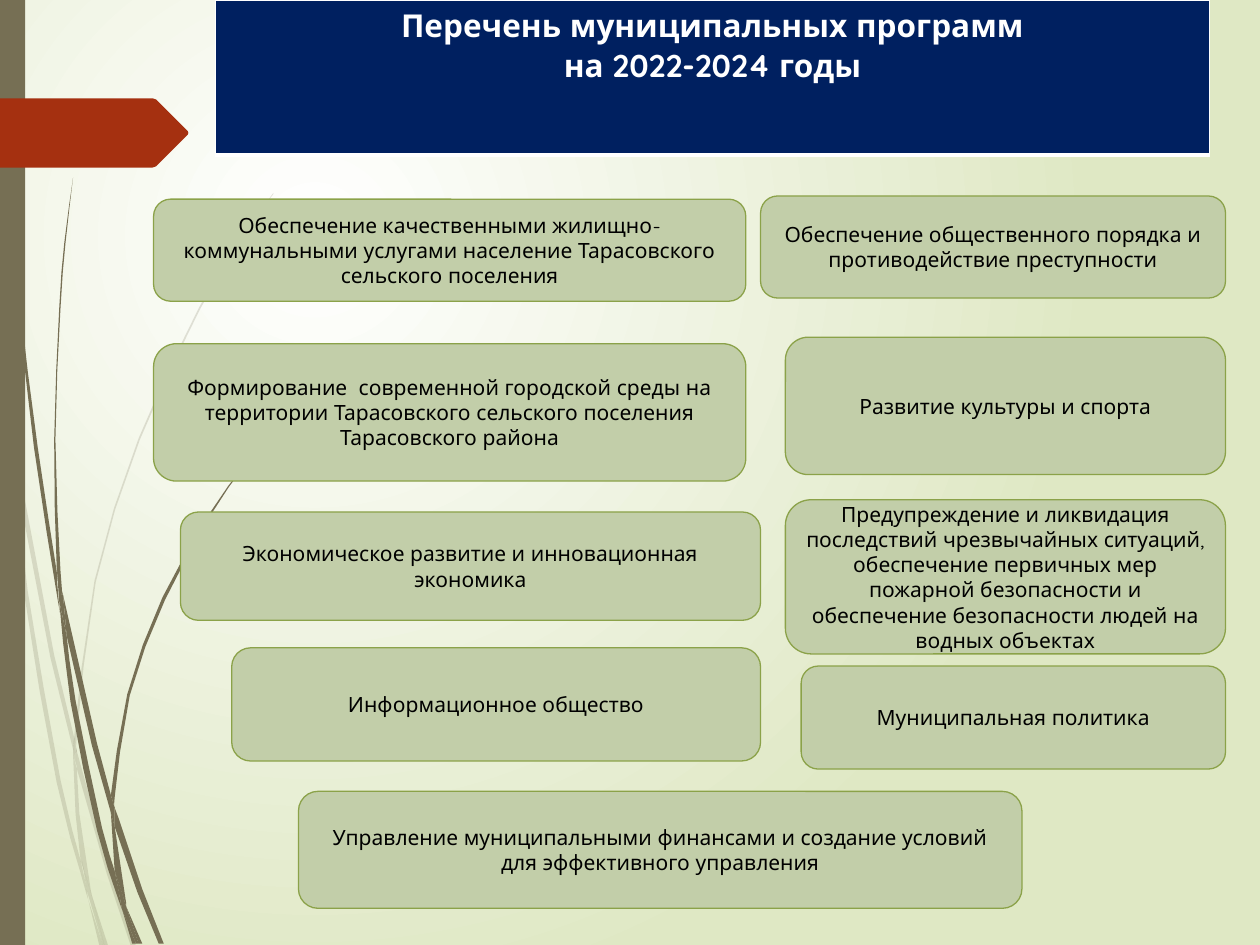
from lxml.etree import SubElement
from pptx import Presentation
from pptx.dml.color import RGBColor
from pptx.enum.shapes import MSO_SHAPE as Shape
from pptx.enum.text import MSO_ANCHOR as Anchor, PP_ALIGN as Align
from pptx.oxml import parse_xml
from pptx.oxml.ns import nsdecls, qn
from pptx.util import Pt

THEME = {
    "font": "Quicksand", "title_size": 18, "box_size": 12,
    "white": "FFFFFF", "black": "000000", "navy": "002060",
    "box": "C2CEA9", "outline": "8BA249", "earth": "766F54",
    "red": "A53010", "background": "DFE8C4",
}
SLIDE_SIZE = (720, 540)
TITLE = ["Перечень муниципальных программ", "на 2022-2024 годы"]
TITLE_PLACE = (123.1, 0, 568.1, 88.6)
TITLE_BORDERS = {"lnL": 1, "lnR": 1, "lnT": 1, "lnB": 3}
STRIPE = (0, 0, 14.4, 540)

INNER, MIDDLE, OUTER = 426.2, 434.6, 700.3
PROGRAMS = [
    (87.8, 113.8, INNER, 58.3, "Обеспечение качественными жилищно-коммунальными услугами население Тарасовского сельского поселения"),
    (434.6, 112, OUTER, 58.3, "Обеспечение общественного порядка и противодействие преступности"),
    (448.8, 192.7, OUTER, 78.5, "Развитие культуры и спорта"),
    (448.8, 285.6, OUTER, 88.1, "Предупреждение и ликвидация последствий чрезвычайных ситуаций, обеспечение первичных мер пожарной безопасности и обеспечение безопасности людей на водных объектах"),
    (87.8, 196.4, INNER, 78.5, "Формирование  современной городской среды на территории Тарасовского сельского поселения Тарасовского района"),
    (103.1, 292.6, MIDDLE, 61.9, "Экономическое развитие и инновационная экономика"),
    (132.4, 370.2, MIDDLE, 64.7, "Информационное общество"),
    (457.8, 380.6, OUTER, 58.9, "Муниципальная политика"),
    (170.6, 452.2, 584, 66.8, "Управление муниципальными финансами и создание условий для эффективного управления"),
]

GRID = 0.72
FAINT_GRASS = [
    ([(8, 350), (6, 322), (0, 282)], [(0, 299), (7, 344)]),
    ([(10, 345), (43, 520), (59, 586)], [(59, 599), (40, 522), (12, 376)]),
    ([(61, 610), (85, 694), (104, 751)], [(108, 751), (88, 692), (64, 607), (61, 596)]),
    ([(73, 711), (83, 751)], [(86, 751)]),
    ([(8, 350), (19, 470), (45, 621), (64, 693), (70, 714)],
     [(69, 707), (64, 683), (48, 619), (22, 469), (12, 376)]),
    ([(58, 599), (60, 646), (64, 683), (73, 711)], [(72, 706), (63, 646), (61, 610)]),
    ([(61, 596), (61, 584), (76, 462), (111, 349), (159, 245), (187, 198), (201, 175), (217, 154)],
     [(217, 153), (201, 175), (186, 197), (158, 244), (110, 348), (75, 461), (59, 584), (59, 586)]),
    ([(70, 714), (79, 751)], [(82, 751)]),
    ([(59, 586), (58, 599), (61, 608)], [(61, 610), (61, 596)]),
    ([(65, 683), (69, 707), (82, 751)], [(83, 751), (73, 711), (67, 692)]),
]
DARK_GRASS = [
    ([(2, 0), (3, 48), (5, 110), (14, 233), (27, 355), (46, 477), (47, 481)],
     [(45, 457), (45, 453), (30, 355), (15, 232), (6, 109), (4, 48), (3, 0)]),
    ([(50, 472), (53, 505), (73, 592), (88, 645)], [(88, 631), (77, 590)]),
    ([(91, 641), (91, 656), (109, 708), (126, 749)], [(130, 749), (113, 706), (94, 649)]),
    ([(47, 477), (56, 557), (77, 659), (92, 708), (97, 722)],
     [(96, 717), (91, 691), (81, 657), (60, 556), (53, 505)]),
    ([(58, 141), (51, 193), (47, 245), (43, 349), (45, 449), (49, 472)],
     [(50, 472), (48, 453), (44, 349), (48, 245), (52, 193), (58, 141)]),
    ([(100, 719), (110, 749)], [(113, 749)]),
    ([(45, 449), (47, 477), (53, 505)], [(50, 472), (49, 472)]),
    ([(216, 344), (203, 358), (191, 373), (168, 405), (129, 474), (101, 551), (88, 631)],
     [(91, 641), (91, 633), (103, 552), (131, 476), (169, 406), (191, 374), (203, 359), (216, 344)]),
    ([(97, 722), (105, 749)], [(108, 749)]),
    ([(88, 645), (91, 691), (100, 719)], [(100, 716), (91, 656)]),
    ([(88, 631), (88, 645), (91, 656)], [(91, 641)]),
    ([(91, 691), (97, 722), (108, 749)], [(110, 749), (100, 719), (96, 706)]),
]
POINTER = [(0, 78), (121, 78), (124, 79), (149, 104), (149.5, 105.5),
           (149, 107), (124, 132), (121, 133), (0, 133)]


def color(name):
    return RGBColor.from_string(THEME[name])


def points(*lengths):
    return [Pt(length) for length in lengths]


def write_text(frame, paragraphs, size, ink, bold=False):
    frame.word_wrap = True
    for index, text in enumerate(paragraphs):
        paragraph = frame.add_paragraph() if index else frame.paragraphs[0]
        paragraph.alignment = Align.CENTER
        run = paragraph.add_run()
        run.text = text
        run.font.name = THEME["font"]
        run.font.size = Pt(THEME[size])
        run.font.bold = bold
        run.font.color.rgb = color(ink)


def paint(shape, fill, line=None, opacity=None):
    shape.shadow.inherit = False
    shape.fill.solid()
    shape.fill.fore_color.rgb = color(fill)
    if opacity:
        solid = shape.fill._xPr.find(qn("a:solidFill"))
        SubElement(solid[0], qn("a:alpha"), val=str(opacity * 1000))
    if line:
        shape.line.color.rgb = color(line)
        shape.line.width = Pt(0.75)
    else:
        shape.line.fill.background()


def smooth(knots):
    if len(knots) < 5:
        return knots
    curve = [knots[0]]
    padded = [knots[0], *knots, knots[-1]]
    for a, b, c, d in zip(padded, padded[1:], padded[2:], padded[3:]):
        middle = tuple((9 * (q + r) - p - s) / 16 for p, q, r, s in zip(a, b, c, d))
        curve += [middle, c]
    return curve


def add_outline(shapes, outline, fill, opacity=None):
    start, *rest = [points(x * GRID, y * GRID) for x, y in outline]
    builder = shapes.build_freeform(*start, scale=1.0)
    builder.add_line_segments(rest, close=True)
    paint(builder.convert_to_shape(), fill, opacity=opacity)


def add_grass(slide, blades, opacity=None):
    group = slide.shapes.add_group_shape()
    for left, right in blades:
        add_outline(group.shapes, smooth(left) + smooth(right), "earth", opacity)


def add_background(slide):
    stops = "".join(
        f'<a:gs pos="{position}"><a:srgbClr val="{THEME[name]}"/></a:gs>'
        for position, name in ((0, "white"), (100000, "background")))
    slide.element.cSld.insert(0, parse_xml(
        f'<p:bg {nsdecls("p", "a")}><p:bgPr><a:gradFill rotWithShape="1">'
        f'<a:gsLst>{stops}</a:gsLst><a:path path="circle">'
        '<a:fillToRect l="50000" t="50000" r="100000" b="100000"/></a:path>'
        '</a:gradFill><a:effectLst/></p:bgPr></p:bg>'))


def add_title(slide):
    table = slide.shapes.add_table(1, 1, *points(*TITLE_PLACE)).table
    cell = table.cell(0, 0)
    write_text(cell.text_frame, TITLE, size="title_size", ink="white", bold=True)
    properties = cell._tc.get_or_add_tcPr()
    for edge, width in TITLE_BORDERS.items():
        border = SubElement(properties, qn(f"a:{edge}"), w=str(int(Pt(width))))
        solid = SubElement(border, qn("a:solidFill"))
        SubElement(solid, qn("a:srgbClr"), val=THEME["white"])
    cell.fill.solid()
    cell.fill.fore_color.rgb = color("navy")


def add_program(slide, left, top, right, height, text):
    box = slide.shapes.add_shape(
        Shape.ROUNDED_RECTANGLE, *points(left, top, right - left, height))
    paint(box, "box", line="outline")
    box.text_frame.vertical_anchor = Anchor.MIDDLE
    write_text(box.text_frame, [text], size="box_size", ink="black")


def main():
    presentation = Presentation()
    presentation.slide_width, presentation.slide_height = points(*SLIDE_SIZE)
    slide = presentation.slides.add_slide(presentation.slide_layouts[6])
    add_background(slide)
    add_grass(slide, FAINT_GRASS, opacity=20)
    add_grass(slide, DARK_GRASS)
    paint(slide.shapes.add_shape(Shape.RECTANGLE, *points(*STRIPE)), "earth")
    add_outline(slide.shapes, POINTER, "red")
    add_title(slide)
    for program in PROGRAMS:
        add_program(slide, *program)
    presentation.save("out.pptx")


if __name__ == "__main__":
    main()
